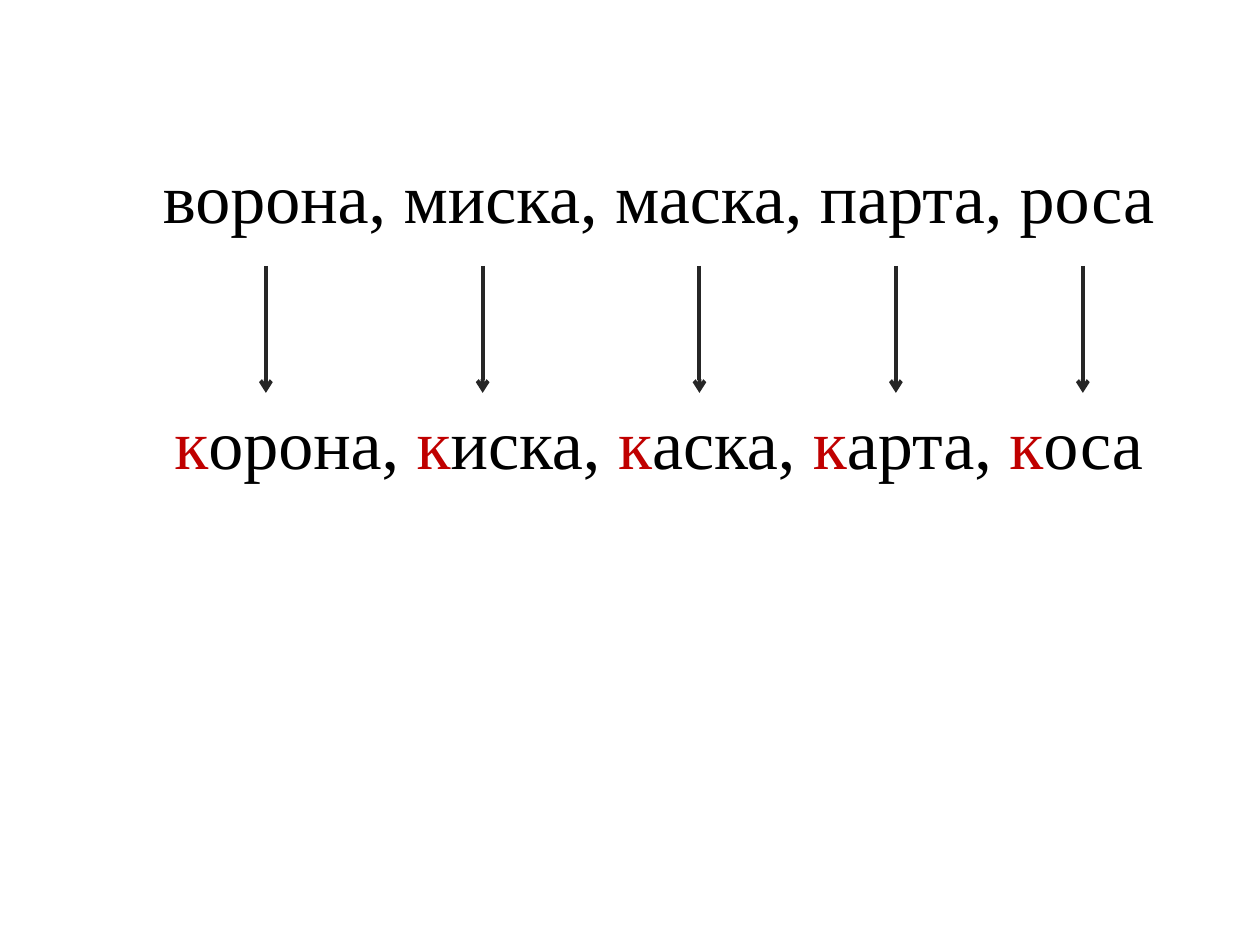
import dataclasses
import typing

import pptx
import pptx.dml.color
import pptx.enum.shapes
import pptx.enum.text
import pptx.oxml
import pptx.oxml.ns
import pptx.util
from pptx.util import Cm

BLACK, RED, GREY = "000000", "C00000", "262626"
LEFT, WIDTH, HEIGHT = 1.57, 23.42, 1.96
START, END = 5.36, 7.92
FONT = {"name": "Times New Roman", "size": pptx.util.Pt(40)}
FRAME = {
    "word_wrap": True,
    "auto_size": pptx.enum.text.MSO_AUTO_SIZE.SHAPE_TO_FIT_TEXT,
}


@dataclasses.dataclass
class Pair:
    old: str
    new: str
    x: float


@dataclasses.dataclass
class Part:
    text: str
    color: str


PAIRS = [
    Pair("ворона", "корона", 5.36),
    Pair("миска", "киска", 9.73),
    Pair("маска", "каска", 14.1),
    Pair("парта", "карта", 18.06),
    Pair("роса", "коса", 21.83),
]


def paint(value: str) -> pptx.dml.color.RGBColor:
    return pptx.dml.color.RGBColor.from_string(value)


def format(item: typing.Any, values: dict) -> None:
    for name, value in values.items():
        setattr(item, name, value)


def add_words(slide: typing.Any, top: float, parts: list[Part]) -> None:
    box = slide.shapes.add_textbox(Cm(LEFT), Cm(top), Cm(WIDTH), Cm(HEIGHT))
    format(box.text_frame, FRAME)
    line = box.text_frame.paragraphs[0]
    line.alignment = pptx.enum.text.PP_ALIGN.CENTER
    for part in parts:
        run = line.add_run()
        run.text = part.text
        format(run.font, FONT)
        run.font.color.rgb = paint(part.color)


def add_arrow(slide: typing.Any, x: float) -> None:
    arrow = slide.shapes.add_connector(
        pptx.enum.shapes.MSO_CONNECTOR.STRAIGHT, Cm(x), Cm(START), Cm(x), Cm(END)
    )
    arrow.line.color.rgb = paint(GREY)
    arrow.line.width = pptx.util.Pt(2.25)
    tail = pptx.oxml.parse_xml(
        f'<a:tailEnd {pptx.oxml.ns.nsdecls("a")} type="arrow"/>'
    )
    arrow.line._get_or_add_ln().append(tail)
    effect = pptx.oxml.parse_xml(f'<a:effectLst {pptx.oxml.ns.nsdecls("a")}/>')
    arrow._element.spPr.append(effect)


def main() -> None:
    deck = pptx.Presentation()
    format(deck, {"slide_width": Cm(25.4), "slide_height": Cm(19.05)})
    slide = deck.slides.add_slide(deck.slide_layouts[6])

    add_words(slide, 2.97, [Part(", ".join(pair.old for pair in PAIRS), BLACK)])

    parts = []
    for pair in PAIRS:
        comma = "" if pair is PAIRS[-1] else ", "
        parts += [Part(pair.new[0], RED), Part(pair.new[1:] + comma, BLACK)]
    add_words(slide, END, parts)

    for pair in PAIRS:
        add_arrow(slide, pair.x)
    deck.save("out.pptx")


if __name__ == "__main__":
    main()
